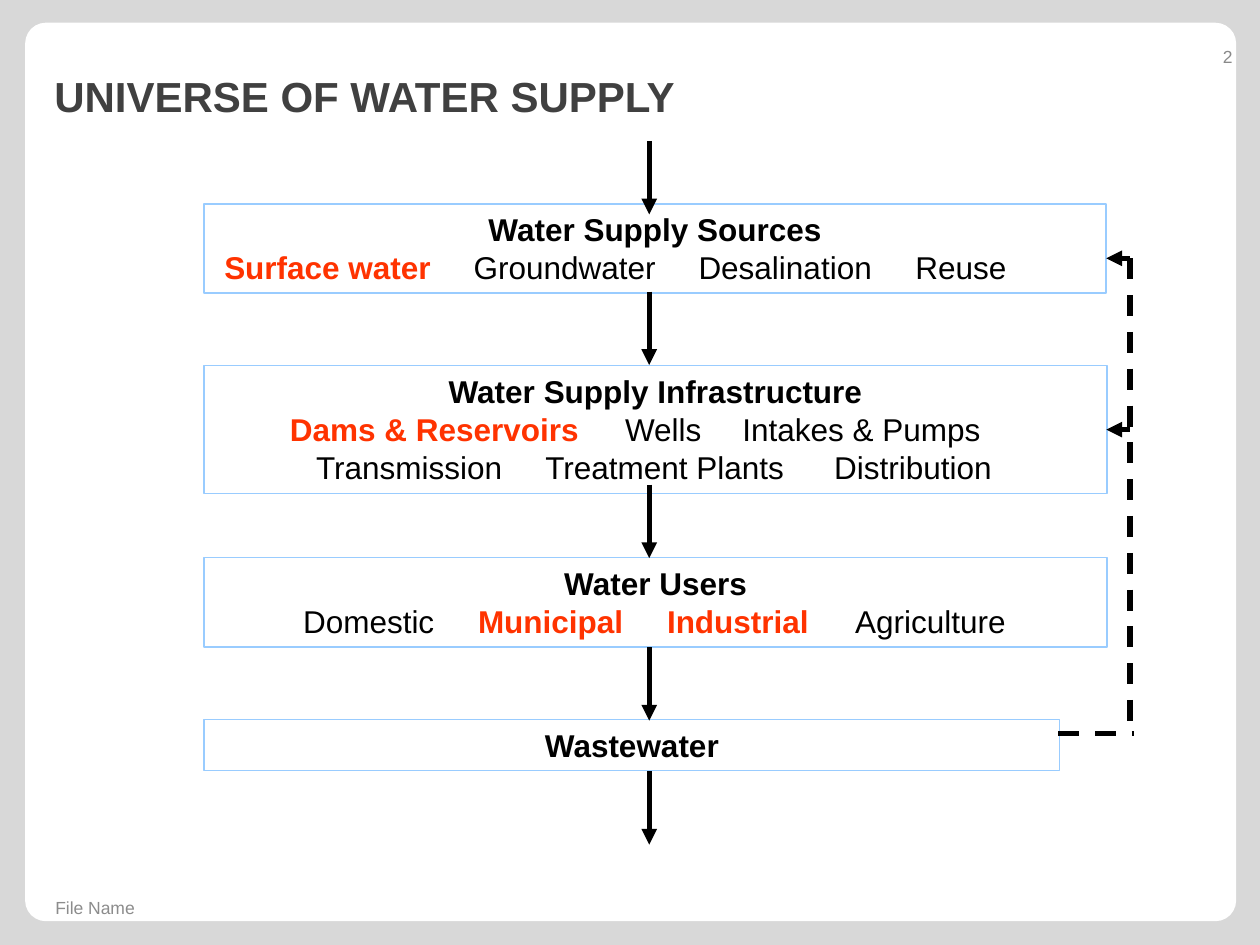
from pptx import Presentation
from pptx.dml.color import RGBColor
from pptx.enum.dml import MSO_LINE
from pptx.enum.shapes import MSO_CONNECTOR, MSO_SHAPE
from pptx.enum.text import MSO_ANCHOR, PP_ALIGN
from pptx.oxml.ns import qn
from pptx.util import Pt
from lxml import etree

LEFT, CENTER, RIGHT = PP_ALIGN.LEFT, PP_ALIGN.CENTER, PP_ALIGN.RIGHT
MIDDLE = MSO_ANCHOR.MIDDLE
STRAIGHT = MSO_CONNECTOR.STRAIGHT
DASH = MSO_LINE.DASH


class Theme:
    font = "Arial"
    title_size, body_size, small_size = 24, 18, 10
    backdrop = RGBColor.from_string("D8D8D8")
    panel = RGBColor.from_string("FFFFFF")
    title = RGBColor.from_string("404040")
    footer = RGBColor.from_string("8C8C8C")
    number = RGBColor.from_string("898989")
    border = RGBColor.from_string("99CCFF")
    text = RGBColor.from_string("000000")
    highlight = RGBColor.from_string("FF3300")


def style_font(font, size, color, bold=False):
    font.name, font.size, font.bold = Theme.font, Pt(size), bold
    font.color.rgb = color


def add_flow_line(start, end, arrow=True, dashed=False):
    """Add a thick black line, optionally dashed or with an arrowhead at its end."""
    connector = slide.shapes.add_connector(
        STRAIGHT, Pt(start[0]), Pt(start[1]), Pt(end[0]), Pt(end[1]))
    connector.line.color.rgb = Theme.text
    connector.line.width = Pt(3)
    if dashed:
        connector.line.dash_style = DASH
    properties = connector._element.spPr
    if arrow:
        etree.SubElement(properties.find(qn("a:ln")), qn("a:tailEnd"), type="triangle")
    etree.SubElement(properties, qn("a:effectLst"))


presentation = Presentation()
presentation.slide_width, presentation.slide_height = Pt(720), Pt(540)
slide = presentation.slides.add_slide(presentation.slide_layouts[5])
slide.background.fill.solid()
slide.background.fill.fore_color.rgb = Theme.backdrop

# White panel, placed behind the title
panel = slide.shapes.add_shape(
    MSO_SHAPE.ROUNDED_RECTANGLE, Pt(14.4), Pt(13), Pt(692), Pt(513.4))
panel.adjustments[0] = 0.023
panel.shadow.inherit = False
panel.fill.solid()
panel.fill.fore_color.rgb = Theme.panel
panel.line.fill.background()
title = slide.shapes.title
title._element.addprevious(panel._element)

title.left, title.top, title.width, title.height = Pt(23.8), Pt(21.6), Pt(660.2), Pt(66)
title.text_frame.text = "UNIVERSE OF WATER SUPPLY"
title.text_frame.vertical_anchor = MIDDLE
title_paragraph = title.text_frame.paragraphs[0]
title_paragraph.alignment = LEFT
style_font(title_paragraph.runs[0].font, Theme.title_size, Theme.title, True)

# Footer and page number
for text, left, top, width, height, alignment, color in (
    ("File Name", 24.5, 509.8, 228, 17.3, LEFT, Theme.footer),
    ("2", 653.8, 18, 57.6, 28.8, RIGHT, Theme.number),
):
    label = slide.shapes.add_textbox(Pt(left), Pt(top), Pt(width), Pt(height))
    label.text_frame.word_wrap = True
    label.text_frame.vertical_anchor = MIDDLE
    label.text_frame.text = text
    paragraph = label.text_frame.paragraphs[0]
    paragraph.alignment = alignment
    style_font(paragraph.runs[0].font, Theme.small_size, color)

# Stages: heading, top, width, height, then rows of (item, tab position)
stages = (
    ("Water Supply Sources", 116.5, 515.5, 51,
     [[("Surface water", 4.5), ("Groundwater", 147), ("Desalination", 275.5),
       ("Reuse", 399.5)]]),
    ("Water Supply Infrastructure", 209, 516, 73,
     [[("Dams & Reservoirs", 42), ("Wells", 233.5), ("Intakes & Pumps", 300.5)],
      [("Transmission", 57), ("Treatment Plants", 188), ("Distribution", 353)]]),
    ("Water Users", 318.7, 516, 51,
     [[("Domestic", 49.5), ("Municipal", 149.5), ("Industrial", 257.5),
       ("Agriculture", 365)]]),
    ("Wastewater", 411.2, 489, 29, []),
)
highlighted = {"Surface water", "Dams & Reservoirs", "Municipal", "Industrial"}

for heading, top, width, height, rows in stages:
    box = slide.shapes.add_shape(
        MSO_SHAPE.RECTANGLE, Pt(116.6), Pt(top), Pt(width), Pt(height))
    box.shadow.inherit = False
    box.fill.solid()
    box.fill.fore_color.rgb = Theme.panel
    box.line.color.rgb = Theme.border
    box.line.width = Pt(0.75)
    frame = box.text_frame
    frame.word_wrap = True
    frame.vertical_anchor = MSO_ANCHOR.TOP
    frame.text = heading
    frame.paragraphs[0].alignment = CENTER
    style_font(frame.paragraphs[0].runs[0].font, Theme.body_size, Theme.text, True)
    for row in rows:
        paragraph = frame.add_paragraph()
        paragraph.alignment = LEFT
        tabs = etree.SubElement(paragraph._p.get_or_add_pPr(), qn("a:tabLst"))
        for item, position in row:
            etree.SubElement(tabs, qn("a:tab"), pos=str(Pt(position)), algn="l")
            run = paragraph.add_run()
            run.text = "\t" + item
            marked = item in highlighted
            color = Theme.highlight if marked else Theme.text
            style_font(run.font, Theme.body_size, color, marked)

# Downward flow
flow_x = 371
for top in (80.5, 166.6, 276.9, 369.8, 440.6):
    add_flow_line((flow_x, top), (flow_x, top + 42))

# Dashed return from wastewater to sources and infrastructure
return_x = 645.7
for y in (147.6, 245.5):
    add_flow_line((return_x, y), (632.2, y), dashed=True)
add_flow_line((return_x, 147.6), (return_x, 416), arrow=False, dashed=True)
add_flow_line((604.8, 419.2), (648, 419.2), arrow=False, dashed=True)

presentation.save("out.pptx")
